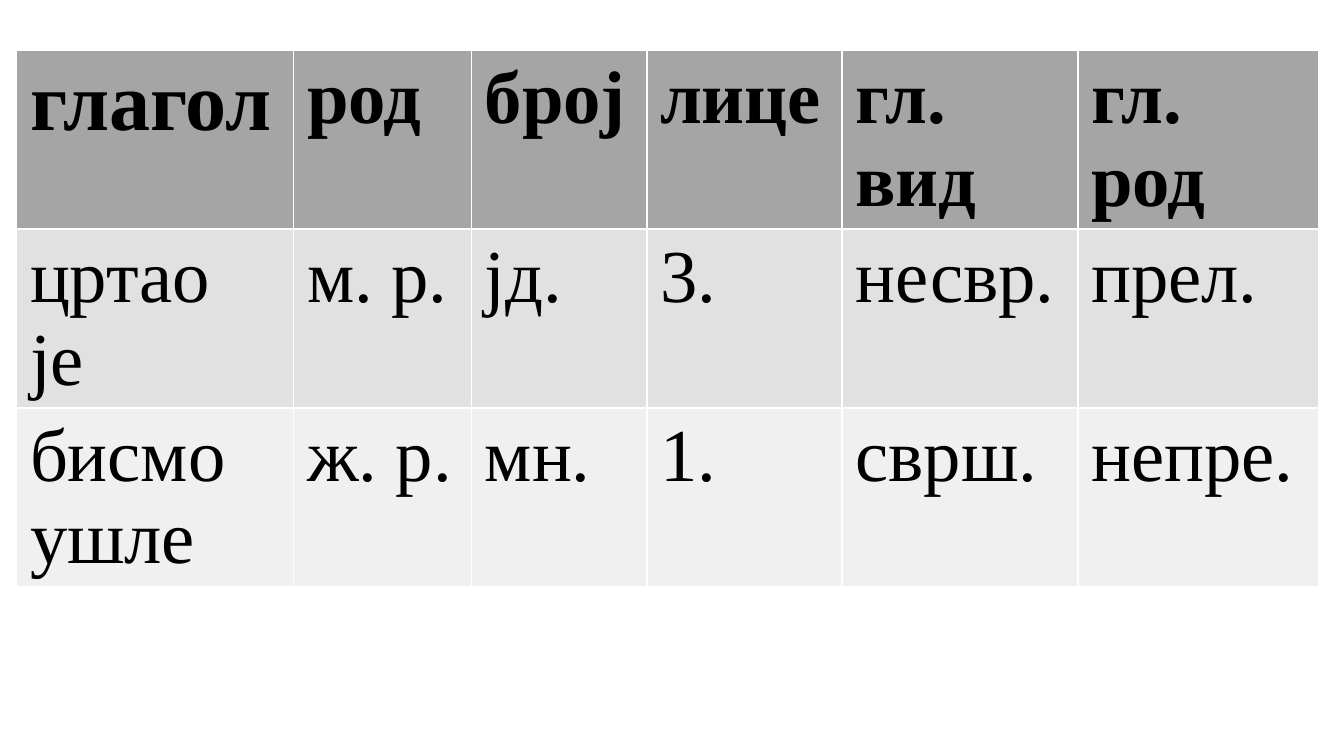
import pptx
import pptx.util
import pptx.dml.color

Pt = pptx.util.Pt


def paint(form, shade):
    form.rgb = pptx.dml.color.RGBColor.from_string(shade)


deck = pptx.Presentation()
deck.slide_width, deck.slide_height = Pt(720), Pt(405)
slide = deck.slides.add_slide(deck.slide_layouts[6])

words = [
    ["глагол", "род", "број", "лице", "гл. вид", "гл. род"],
    ["цртао је", "м. р.", "јд.", "3.", "несвр.", "прел."],
    ["бисмо ушле", "ж. р.", "мн.", "1.", "сврш.", "непре."],
]
fills = ["A5A5A5", "E1E1E1", "F0F0F0"]
widths = [148.4, 95.3, 93.9, 104.7, 126.3, 129.1]

frame = slide.shapes.add_table(
    len(words), len(widths), Pt(8.9), Pt(27), Pt(sum(widths)), Pt(309.6))
table = frame.table
for col, width in zip(table.columns, widths):
    col.width = Pt(width)

for r, (row, line, fill) in enumerate(zip(table.rows, words, fills)):
    row.height = Pt(58.3)
    for c, (cell, word) in enumerate(zip(row.cells, line)):
        cell.fill.solid()
        paint(cell.fill.fore_color, fill)
        cell.text = word
        font = cell.text_frame.paragraphs[0].runs[0].font
        style = {
            "name": "Times New Roman",
            "size": Pt(44 if r == c == 0 else 40),
            "bold": r == 0,
        }
        for key, value in style.items():
            setattr(font, key, value)
        paint(font.color, "000000")

frame.height = Pt(309.6)
deck.save("out.pptx")
